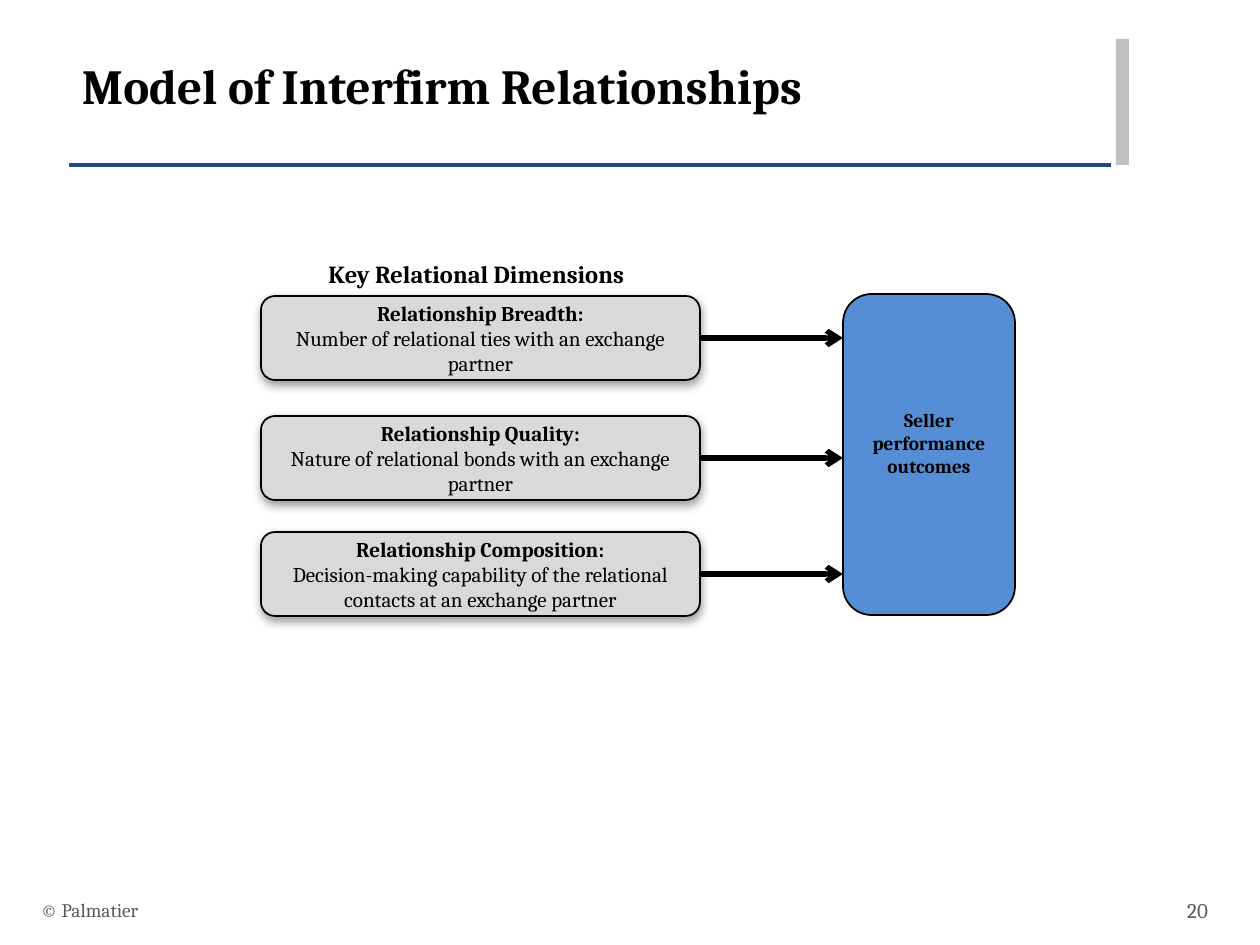
import pptx
import pptx.util
import pptx.dml.color
import pptx.enum.shapes
import pptx.enum.text
import pptx.oxml
import pptx.oxml.ns

SHAPES = pptx.enum.shapes.MSO_SHAPE
ALIGN = pptx.enum.text.PP_ALIGN
ANCHOR = pptx.enum.text.MSO_ANCHOR
NAMESPACE = 'xmlns:a="http://schemas.openxmlformats.org/drawingml/2006/main"'
SHADOW = (
    f'<a:effectLst {NAMESPACE}><a:outerShdw blurRad="63500" dist="25400" dir="5400000">'
    '<a:srgbClr val="808080"><a:alpha val="75000"/></a:srgbClr>'
    '</a:outerShdw></a:effectLst>'
)
BLACK = "000000"
GRAY = "595959"


def px(length):
    return pptx.util.Emu(length * 914400 // 126)


def color(value):
    return pptx.dml.color.RGBColor.from_string(value)


class SlideBuilder:
    font_name = "Cambria"

    def __init__(self, slide):
        self.slide = slide

    def fill_text(self, shape, lines, align, anchor, margins=(13, 6, 13, 6)):
        frame = shape.text_frame
        left, top, right, bottom = map(px, margins)
        settings = {
            "word_wrap": True, "vertical_anchor": anchor,
            "margin_left": left, "margin_top": top,
            "margin_right": right, "margin_bottom": bottom,
        }
        for name, value in settings.items():
            setattr(frame, name, value)
        for index, (text, size, bold, text_color) in enumerate(lines):
            paragraph = frame.add_paragraph() if index else frame.paragraphs[0]
            paragraph.alignment = align
            run = paragraph.add_run()
            run.text = text
            font = {"name": self.font_name, "size": pptx.util.Pt(size), "bold": bold}
            for name, value in font.items():
                setattr(run.font, name, value)
            run.font.color.rgb = color(text_color)

    def text(self, box, line, align=ALIGN.LEFT, anchor=ANCHOR.MIDDLE):
        shape = self.slide.shapes.add_textbox(*map(px, box))
        self.fill_text(shape, [line], align, anchor)

    def block(self, kind, box, fill, outlined=True, shadowed=False):
        shape = self.slide.shapes.add_shape(kind, *map(px, box))
        shape.shadow.inherit = False
        shape.fill.solid()
        shape.fill.fore_color.rgb = color(fill)
        if outlined:
            shape.line.color.rgb = color(BLACK)
            shape.line.width = pptx.util.Pt(1)
        else:
            shape.line.fill.background()
        if shadowed:
            properties = shape._element.spPr
            properties.remove(properties.find(pptx.oxml.ns.qn("a:effectLst")))
            properties.append(pptx.oxml.parse_xml(SHADOW))
        return shape

    def line(self, start, end, line_color, width, source=None, arrow=False):
        connector = self.slide.shapes.add_connector(
            pptx.enum.shapes.MSO_CONNECTOR.STRAIGHT, *map(px, start + end))
        if source is not None:
            connector.begin_connect(source, 3)
        connector.line.color.rgb = color(line_color)
        connector.line.width = pptx.util.Pt(width)
        if arrow:
            connector.line._get_or_add_ln().append(
                pptx.oxml.parse_xml(f'<a:tailEnd {NAMESPACE} type="arrow"/>'))
        connector._element.spPr.append(
            pptx.oxml.parse_xml(f"<a:effectLst {NAMESPACE}/>"))


def main():
    presentation = pptx.Presentation()
    presentation.slide_width = px(1260)
    presentation.slide_height = px(945)
    builder = SlideBuilder(presentation.slides.add_slide(presentation.slide_layouts[6]))

    builder.line((69, 165), (1111, 165), "1F497D", 2)
    builder.block(SHAPES.RECTANGLE, (1116, 39, 13, 126), "BFBFBF", outlined=False)
    builder.text((69, 50, 1041, 111),
                 ("Model of Interfirm Relationships", 28, True, BLACK), anchor=ANCHOR.TOP)

    outcome = builder.block(SHAPES.ROUNDED_RECTANGLE, (843, 294, 172, 321), "558ED5")
    builder.fill_text(outcome, [("Seller performance outcomes", 11, True, BLACK)],
                      ALIGN.CENTER, ANCHOR.MIDDLE, (11, 5, 11, 28))

    builder.text((261, 253, 431, 42),
                 ("Key Relational Dimensions", 14, True, BLACK), ALIGN.CENTER, ANCHOR.TOP)
    left, width, height = 261, 439, 84
    dimensions = [
        (296, "Relationship Breadth:", "Number of relational ties with an exchange partner"),
        (416, "Relationship Quality:", "Nature of relational bonds with an exchange partner"),
        (532, "Relationship Composition:",
         "Decision-making capability of the relational contacts at an exchange partner"),
    ]
    for top, name, description in dimensions:
        dimension = builder.block(
            SHAPES.ROUNDED_RECTANGLE, (left, top, width, height), "D9D9D9", shadowed=True)
        builder.fill_text(dimension, [(name, 12, True, BLACK), (description, 12, False, BLACK)],
                          ALIGN.CENTER, ANCHOR.MIDDLE)
        middle = top + height // 2
        builder.line((left + width, middle), (843, middle), BLACK, 3, dimension, arrow=True)

    builder.text((28, 885, 844, 50), ("© Palmatier", 11, False, GRAY))
    builder.text((1144, 885, 77, 50), ("20", 12, False, GRAY), ALIGN.RIGHT)

    presentation.save("out.pptx")


if __name__ == "__main__":
    main()
